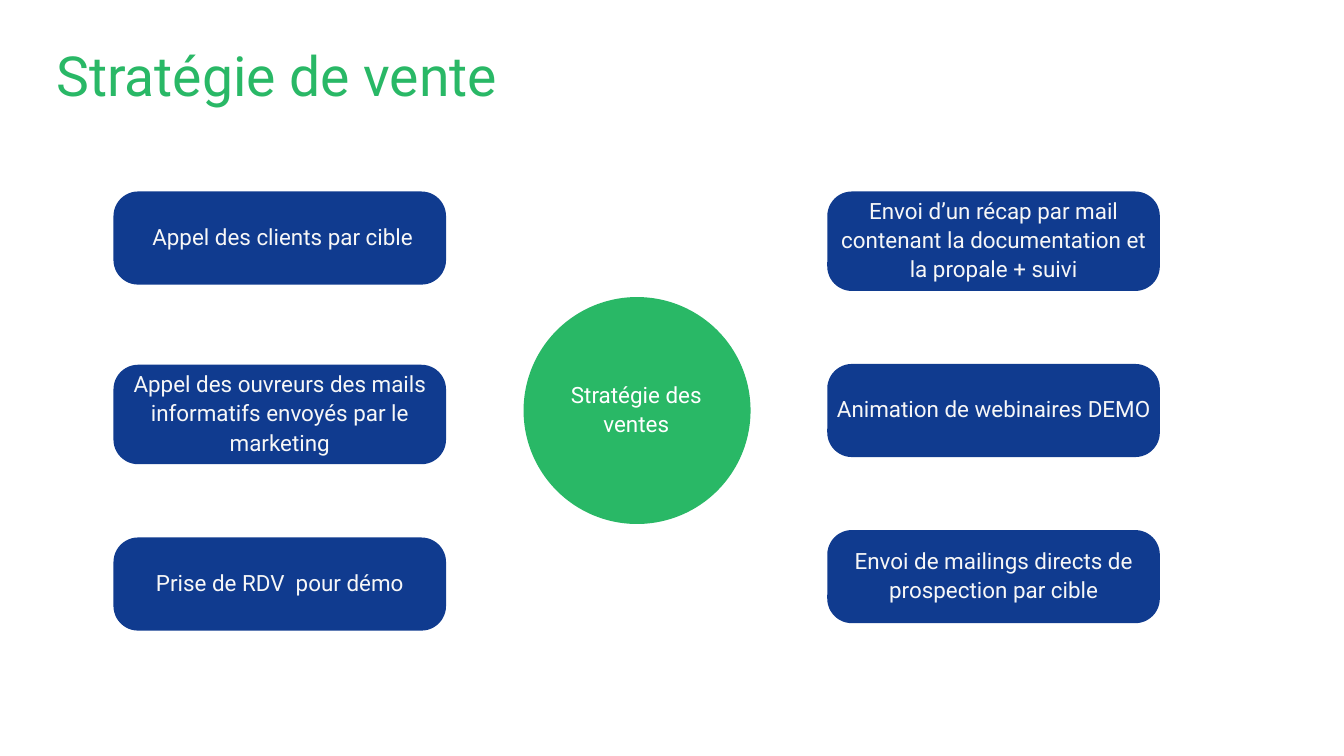
from pptx import Presentation
from pptx.dml.color import RGBColor
from pptx.enum.shapes import MSO_SHAPE
from pptx.enum.text import MSO_ANCHOR, PP_ALIGN
from pptx.util import Cm, Pt

# Content: each column has its left edge and (top, height, text) cards, in cm
TITLE = "Stratégie de vente"
HUB = "Stratégie des ventes"
LOW, TALL = 3.52, 3.76
COLUMNS = [
    (4.29, [
        (7.24, LOW, " Appel des clients par cible"),
        (13.79, TALL, "Appel des ouvreurs des mails informatifs envoyés par le marketing"),
        (20.32, LOW, "Prise de RDV  pour démo"),
    ]),
    (31.27, [
        (7.24, TALL, "Envoi d’un récap par mail contenant la documentation et la propale + suivi"),
        (13.76, LOW, "Animation de webinaires DEMO"),
        (20.04, LOW, "Envoi de mailings directs de prospection par cible"),
    ]),
]

# Look
GREEN, BLUE, WHITE, PALE = "29B866", "103B8F", "FFFFFF", "F7F7F7"
WIDTH, RADIUS, LIFT = 12.57, 0.93, 0.2
LABEL = {"size": 24, "lead": 31.2, "pad": 0.15,
         "align": PP_ALIGN.CENTER, "anchor": MSO_ANCHOR.MIDDLE}
HEAD = {"size": 59.2, "lead": 65.2, "pad": 0,
        "align": PP_ALIGN.LEFT, "anchor": MSO_ANCHOR.TOP}


def tint(code):
    return RGBColor.from_string(code)


def add_form(slide, kind, box, color):
    form = slide.shapes.add_shape(kind, *map(Cm, box))
    form.shadow.inherit = False
    form.fill.solid()
    form.fill.fore_color.rgb = tint(color)
    form.line.fill.background()
    return form


def add_text(slide, text, box, color, look):
    frame = slide.shapes.add_textbox(*map(Cm, box)).text_frame
    pad = Cm(look["pad"])
    para = frame.paragraphs[0]
    run = para.add_run()
    run.text = text
    run.font.color.rgb = tint(color)
    formats = [
        (frame, {"word_wrap": True, "vertical_anchor": look["anchor"],
                 "margin_left": pad, "margin_right": pad,
                 "margin_top": pad, "margin_bottom": pad}),
        (para, {"alignment": look["align"], "line_spacing": Pt(look["lead"])}),
        (run.font, {"name": "Roboto", "size": Pt(look["size"])}),
    ]
    for part, values in formats:
        for name, value in values.items():
            setattr(part, name, value)


def main():
    deck = Presentation()
    deck.slide_width, deck.slide_height = Cm(50.8), Cm(28.58)
    slide = deck.slides.add_slide(deck.slide_layouts[6])

    # Title
    add_text(slide, TITLE, (2.13, 1.78, 47.1, 2.34), GREEN, HEAD)

    # Central circle
    add_form(slide, MSO_SHAPE.OVAL, (19.79, 11.23, 8.58, 8.58), GREEN)
    add_text(slide, HUB, (20.57, 11.84, 6.96, 7.16), WHITE, LABEL)

    # Cards, each label box reaching slightly above its card
    for left, cards in COLUMNS:
        for top, height, text in cards:
            card = add_form(slide, MSO_SHAPE.ROUNDED_RECTANGLE,
                            (left, top, WIDTH, height), BLUE)
            card.adjustments[0] = RADIUS / height
            add_text(slide, text, (left, top - LIFT, WIDTH, height + LIFT),
                     PALE, LABEL)

    deck.save("out.pptx")


if __name__ == "__main__":
    main()
